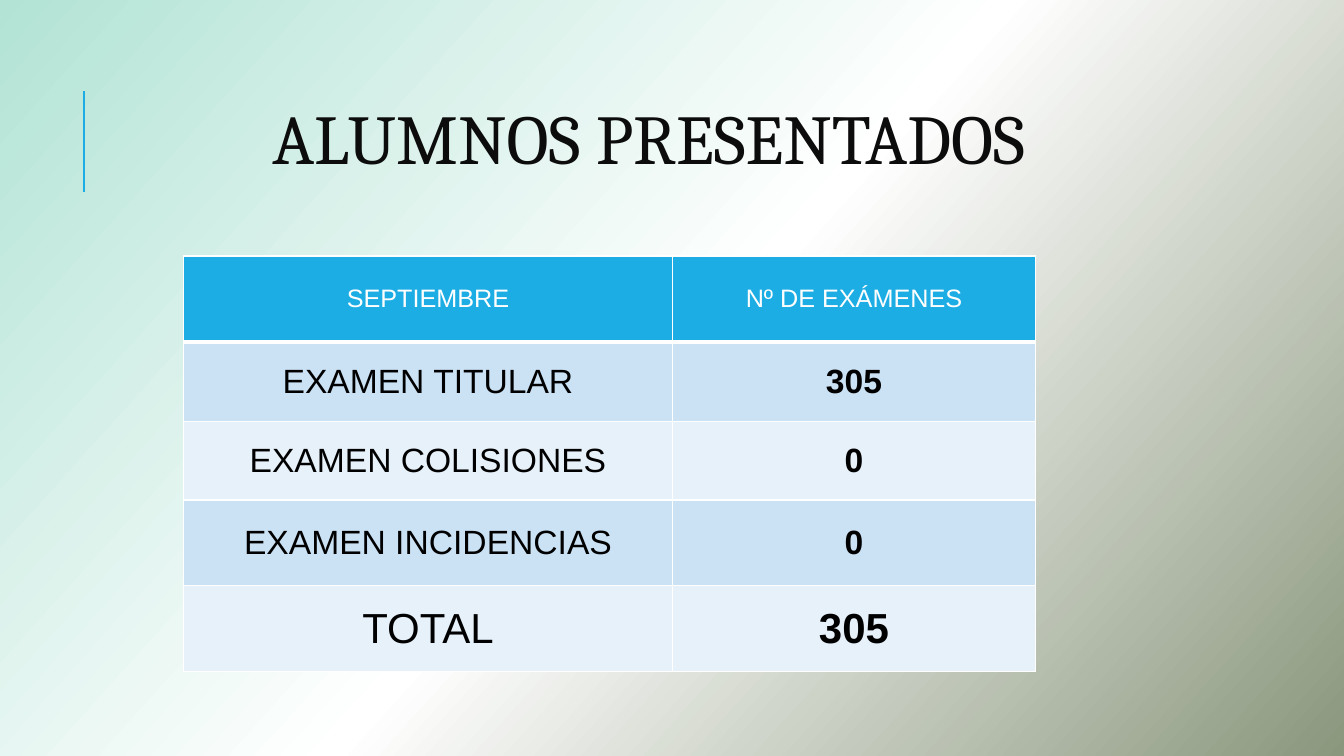
from copy import deepcopy

from lxml import etree
from pptx import Presentation
from pptx.dml.color import RGBColor
from pptx.enum import shapes, text
from pptx.oxml import ns
from pptx.util import Inches, Pt

COLORS = {
    "mint": "B2E3D5", "white": "FFFFFF", "olive": "8A977D", "blue": "1CADE4",
    "ink": "0C0C0C", "black": "000000", "band": "CBE2F5", "pale": "E7F1FA",
}
ROWS = [
    # label, value, height, size, fill, font colour
    ("SEPTIEMBRE", "Nº DE EXÁMENES", 0.85, 18, "blue", "white"),
    ("EXAMEN TITULAR", "305", 0.79, 24, "band", "black"),
    ("EXAMEN COLISIONES", "0", 0.78, 24, "pale", "black"),
    ("EXAMEN INCIDENCIAS", "0", 0.85, 24, "band", "black"),
    ("TOTAL", "305", 0.85, 30, "pale", "black"),
]


def rgb(name):
    return RGBColor.from_string(COLORS[name])


class Deck:
    def __init__(self):
        self.prs = Presentation()
        self.prs.slide_width, self.prs.slide_height = Inches(13.33), Inches(7.5)
        self.slide = self.prs.slides.add_slide(self.prs.slide_layouts[6])

    def backdrop(self, names, angle):
        """Fill the background with evenly spaced stops; angle is clockwise."""
        fill = self.slide.background.fill
        fill.gradient()
        fill.gradient_angle = 360 - angle
        stops = next(self.slide.element.iter(ns.qn("a:gsLst")))
        stops.append(deepcopy(stops[0]))
        for i, (stop, name) in enumerate(zip(fill.gradient_stops, names)):
            stop.color.rgb = rgb(name)
            stop.position = i / (len(names) - 1)

    def line(self, x1, y1, x2, y2, color, width):
        line = self.slide.shapes.add_connector(
            shapes.MSO_CONNECTOR.STRAIGHT, *map(Inches, (x1, y1, x2, y2)))
        line.line.color.rgb = rgb(color)
        line.line.width = Pt(width)
        etree.SubElement(line.element.spPr, ns.qn("a:effectLst"))

    def style(self, frame, font, size, color, bold=False):
        para = frame.paragraphs[0]
        para.alignment = text.PP_ALIGN.CENTER
        for run in para.runs:
            run.font.name, run.font.size, run.font.bold = font, Pt(size), bold
            run.font.color.rgb = rgb(color)

    def title(self, words, x, y, w, h):
        frame = self.slide.shapes.add_textbox(*map(Inches, (x, y, w, h))).text_frame
        frame.word_wrap = True
        frame.vertical_anchor = text.MSO_ANCHOR.MIDDLE
        frame.text = words
        frame.paragraphs[0].line_spacing = 0.8
        self.style(frame, "Cambria", 50, "ink")

    def border(self, cell, side, width):
        props = cell._tc.get_or_add_tcPr()
        edge = etree.SubElement(props, ns.qn("a:ln" + side), w=str(Pt(width)))
        fill = etree.SubElement(edge, ns.qn("a:solidFill"))
        etree.SubElement(fill, ns.qn("a:srgbClr"), val=COLORS["white"])

    def table(self, rows, x, y, widths):
        high = sum(row[2] for row in rows)
        box = map(Inches, (x, y, sum(widths), high))
        grid = self.slide.shapes.add_table(len(rows), len(widths), *box).table
        for col, width in zip(grid.columns, widths):
            col.width = Inches(width)
        for r, (label, value, height, size, fill, color) in enumerate(rows):
            grid.rows[r].height = Inches(height)
            for c, words in enumerate((label, value)):
                cell = grid.cell(r, c)
                for side in "LRTB":
                    thick = (r, side) in ((0, "B"), (1, "T"))
                    self.border(cell, side, 3 if thick else 1)
                cell.fill.solid()
                cell.fill.fore_color.rgb = rgb(fill)
                cell.vertical_anchor = text.MSO_ANCHOR.MIDDLE
                cell.text_frame.text = words
                self.style(cell.text_frame, "Arial", size, color, r > 0 and c == 1)


def main():
    deck = Deck()
    deck.backdrop(("mint", "white", "olive"), 42)
    deck.line(0.83, 1.9, 0.83, 0.9, "blue", 1.5)
    deck.title("ALUMNOS PRESENTADOS", 1.12, 0.61, 10.63, 1.64)
    deck.table(ROWS, 1.82, 2.54, (4.85, 3.6))
    deck.prs.save("out.pptx")


if __name__ == "__main__":
    main()
